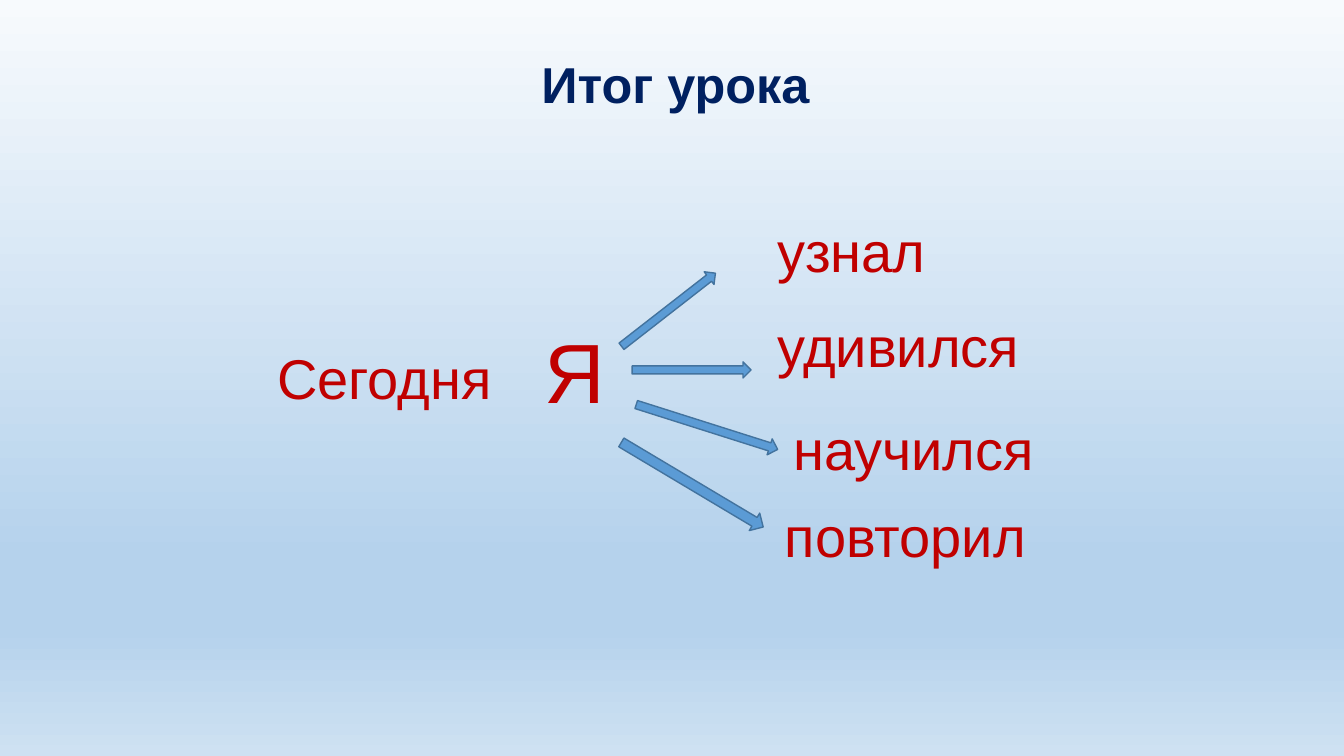
from copy import deepcopy
from lxml.etree import SubElement
from pptx import Presentation
from pptx.dml.color import RGBColor
from pptx.enum.shapes import MSO_SHAPE as Shape
from pptx.enum.text import MSO_ANCHOR as Anchor, MSO_AUTO_SIZE as Fit, PP_ALIGN as Align
from pptx.oxml.ns import qn
from pptx.util import Pt

NAVY = RGBColor(0x00, 0x20, 0x60)
RED = RGBColor(0xC0, 0x00, 0x00)
BLUE = RGBColor(0x5B, 0x9B, 0xD5)
EDGE = RGBColor(0x43, 0x73, 0x9E)
PALE = RGBColor(0xF7, 0xFA, 0xFD)
SKY = RGBColor(0xB5, 0xD2, 0xEC)
MIST = RGBColor(0xCE, 0xE1, 0xF2)

# Boxes are left, top, width, height in points
TITLE = ("Итог урока", (379.5, 34.5, 208, 51))
PERSON = ("Я", (366.5, 224.5, 88, 80))
WORDS = [
    ("Сегодня", (191, 242, 169, 55.5)),
    ("узнал", (548, 151, 121.5, 55.5)),
    ("удивился", (548, 219, 189.5, 55.5)),
    ("научился", (559.5, 292.5, 189, 55.5)),
    ("повторил", (553.5, 355, 189, 55.5)),
]
# Box, then rotation in degrees
ARROWS = [
    ((452, 299, 106, 12), 17.6),
    ((451.5, 258.5, 85, 11.5), 0),
    ((435.5, 339, 118, 14.5), 30.8),
    ((435, 215.5, 85, 11.5), 322.1),
]
STOPS = [(0, PALE), (74, SKY), (83, SKY), (100, MIST)]


def points(box):
    return [Pt(n) for n in box]


def paint(slide):
    """Fill the background with the top-to-bottom gradient."""
    fill = slide.background.fill
    fill.gradient()
    fill.gradient_angle = 270
    stops = fill.gradient_stops
    first = slide.element.find(".//" + qn("a:gs"))
    for _ in range(len(STOPS) - len(stops)):
        first.addnext(deepcopy(first))
    for stop, (place, color) in zip(fill.gradient_stops, STOPS):
        stop.position = place / 100
        stop.color.rgb = color


def write(shape, text, size, color, bold=False, align=Align.LEFT, wrap=False):
    frame = shape.text_frame
    frame.word_wrap = wrap
    frame.auto_size = Fit.SHAPE_TO_FIT_TEXT
    frame.vertical_anchor = Anchor.TOP
    para = frame.paragraphs[0]
    para.alignment = align
    para.line_spacing = 1.0
    para.space_before = Pt(0)
    run = para.add_run()
    run.text = text
    font = run.font
    font.name, font.size, font.bold = "Arial", Pt(size), bold
    font.color.rgb = color
    return run


def outline(run, color, width):
    props = run.font._element
    line = SubElement(props, qn("a:ln"), w=str(Pt(width)))
    solid = SubElement(line, qn("a:solidFill"))
    SubElement(solid, qn("a:srgbClr"), val=color)
    props.insert(0, line)


def main():
    deck = Presentation()
    deck.slide_width, deck.slide_height = Pt(960), Pt(540)
    slide = deck.slides.add_slide(deck.slide_layouts[5])
    shapes = slide.shapes
    paint(slide)

    text, box = TITLE
    title = shapes.title
    title.left, title.top, title.width, title.height = points(box)
    write(title, text, 36, NAVY, bold=True)

    text, box = PERSON
    person = shapes.add_textbox(*points(box))
    run = write(person, text, 60, RED, align=Align.CENTER, wrap=True)
    outline(run, "FF0000", 0.75)

    for text, box in WORDS:
        write(shapes.add_textbox(*points(box)), text, 40, RED)

    for box, turn in ARROWS:
        arrow = shapes.add_shape(Shape.RIGHT_ARROW, *points(box))
        arrow.rotation = turn
        arrow.shadow.inherit = False
        arrow.fill.solid()
        arrow.fill.fore_color.rgb = BLUE
        arrow.line.color.rgb = EDGE
        arrow.line.width = Pt(1)

    deck.save("out.pptx")


if __name__ == "__main__":
    main()
